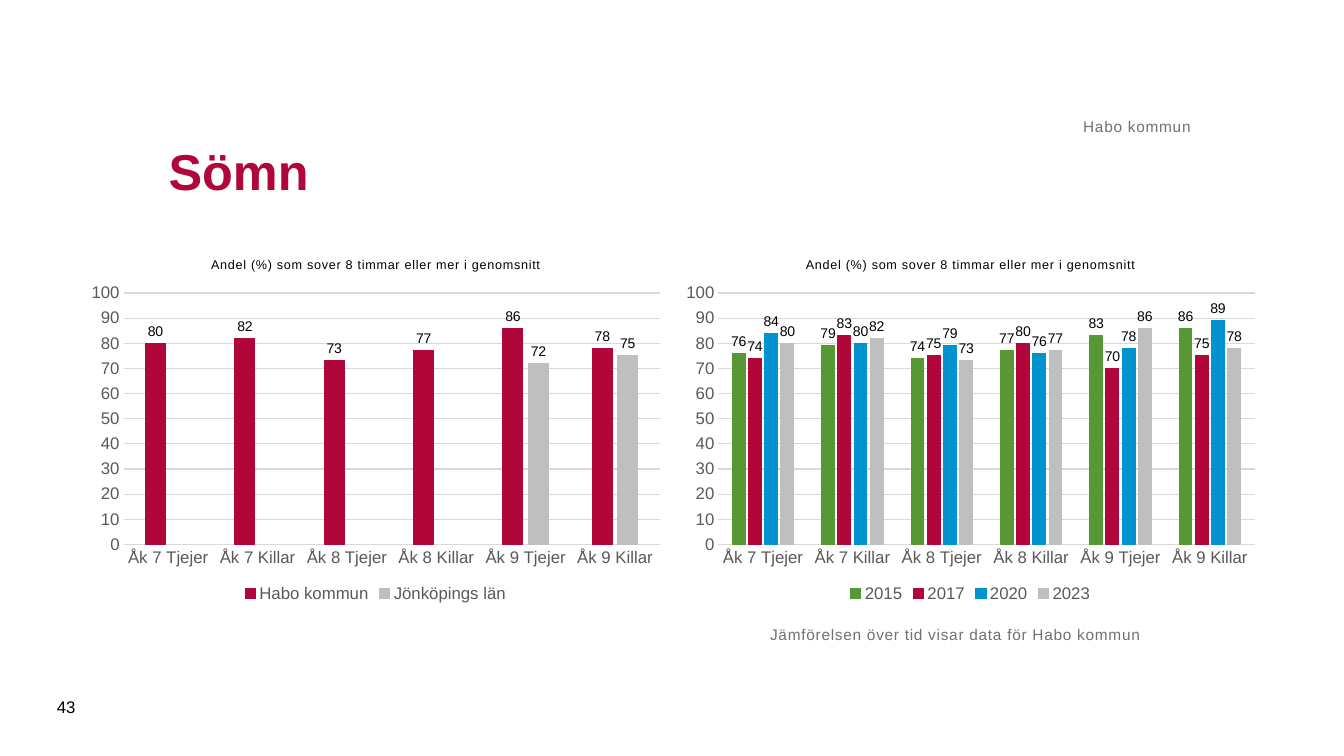
from dataclasses import dataclass

from pptx import Presentation
from pptx.chart.data import CategoryChartData as ChartData
from pptx.dml.color import RGBColor as RGB
from pptx.enum.chart import XL_CHART_TYPE as ChartType, XL_LABEL_POSITION as LabelPos
from pptx.enum.chart import XL_LEGEND_POSITION as LegendPos, XL_TICK_MARK as Tick
from pptx.enum.text import MSO_ANCHOR as Anchor, PP_ALIGN as Align
from pptx.util import Inches, Pt


@dataclass(frozen=True)
class Theme:
    font: str = "Arial"
    red: str = "B1063A"
    green: str = "579835"
    blue: str = "0093D0"
    silver: str = "BFBFBF"
    grid: str = "D9D9D9"
    axis: str = "595959"
    note: str = "717171"
    black: str = "000000"
    title_size: float = 36
    axis_size: float = 12
    note_size: float = 11
    label_size: float = 10
    caption_size: float = 9
    line: float = 0.75
    spacing: str = "50"


T = Theme()
WIDTH, HEIGHT = Inches(13.33), Inches(7.5)
CAPTION = "Andel (%) som sover 8 timmar eller mer i genomsnitt"
GROUPS = [f"Åk {year} {sex}" for year in (7, 8, 9) for sex in ("Tjejer", "Killar")]
COUNTY = [
    ("Habo kommun", (80, 82, 73, 77, 86, 78), T.red),
    ("Jönköpings län", (None, None, None, None, 72, 75), T.silver),
]
YEARS = [
    ("2015", (76, 79, 74, 77, 83, 86), T.green),
    ("2017", (74, 83, 75, 80, 70, 75), T.red),
    ("2020", (84, 80, 79, 76, 78, 89), T.blue),
    ("2023", (80, 82, 73, 77, 86, 78), T.silver),
]


def share(x, y, w, h):
    return int(WIDTH * x), int(HEIGHT * y), int(WIDTH * w), int(HEIGHT * h)


def apply(obj, **values):
    for name, value in values.items():
        setattr(obj, name, value)


def style_font(font, size, color, bold=False):
    apply(font, name=T.font, size=Pt(size), bold=bold)
    font.color.rgb = RGB.from_string(color)


def style_line(line, color):
    line.color.rgb = RGB.from_string(color)
    line.width = Pt(T.line)


def write(tf, text, size, color, bold=False, align=Align.LEFT, spaced=False):
    p = tf.paragraphs[0]
    p.alignment = align
    r = p.add_run()
    r.text = text
    style_font(r.font, size, color, bold)
    if spaced:
        r.font._element.set("spc", T.spacing)


def add_title(s, text, box):
    sp = s.shapes.title
    apply(sp, **dict(zip(("left", "top", "width", "height"), box)))
    apply(sp.text_frame, vertical_anchor=Anchor.MIDDLE, word_wrap=True)
    write(sp.text_frame, text, T.title_size, T.red, bold=True)


def add_text(s, text, box, size, color, anchor, inset=0, **options):
    tf = s.shapes.add_textbox(*box).text_frame
    apply(tf, word_wrap=True, vertical_anchor=anchor, margin_left=inset,
          margin_right=inset, margin_top=inset, margin_bottom=inset)
    write(tf, text, size, color, **options)


def style_axes(chart):
    cat, val = chart.category_axis, chart.value_axis
    for axis in (cat, val):
        apply(axis, major_tick_mark=Tick.NONE, minor_tick_mark=Tick.NONE)
        style_font(axis.tick_labels.font, T.axis_size, T.axis)
    style_line(cat.format.line, T.grid)
    apply(val, minimum_scale=0, maximum_scale=100, major_unit=10,
          has_major_gridlines=True)
    style_line(val.major_gridlines.format.line, T.grid)
    val.format.line.fill.background()
    apply(val.tick_labels, number_format="#,##0;#,##0", number_format_is_linked=False)


def add_column_chart(s, series, box, label_format):
    data = ChartData()
    data.categories = GROUPS
    for name, values, _ in series:
        data.add_series(name, values)
    chart = s.shapes.add_chart(ChartType.COLUMN_CLUSTERED, *box, data).chart
    style_font(chart.font, T.label_size, T.black)
    write(chart.chart_title.text_frame, CAPTION, T.caption_size, T.black,
          align=Align.CENTER, spaced=True)
    chart.chart_title.include_in_layout = False
    chart.has_legend = True
    apply(chart.legend, position=LegendPos.BOTTOM, include_in_layout=False)
    style_font(chart.legend.font, T.axis_size, T.axis)
    style_axes(chart)
    plot = chart.plots[0]
    apply(plot, gap_width=219, overlap=-27, vary_by_categories=False)
    for ser, (_, _, color) in zip(plot.series, series):
        ser.invert_if_negative = False
        ser.format.fill.solid()
        ser.format.fill.fore_color.rgb = RGB.from_string(color)
        style_line(ser.format.line, color)
        labels = ser.data_labels
        apply(labels, show_value=True, position=LabelPos.OUTSIDE_END,
              number_format=label_format, number_format_is_linked=False)
        style_font(labels.font, T.label_size, T.black)


def main():
    prs = Presentation()
    apply(prs, slide_width=WIDTH, slide_height=HEIGHT)
    s = prs.slides.add_slide(prs.slide_layouts[5])
    add_title(s, "Sömn", share(0.118, 0.131, 0.768, 0.189))
    charts = ((COUNTY, "#,##0;#,##0"), (YEARS, "#,##0"))
    for col, (series, label_format) in enumerate(charts):
        box = share(0.0593 + col * 0.4426, 0.32, 0.4404, 0.4827)
        add_column_chart(s, series, box, label_format)
    add_text(s, "Jämförelsen över tid visar data för Habo kommun",
             share(0.573, 0.827, 0.398, 0.125), T.note_size, T.note,
             Anchor.TOP, spaced=True)
    add_text(s, "Habo kommun", share(0.118, 0.083, 0.768, 0.097), T.note_size,
             T.note, Anchor.BOTTOM, align=Align.RIGHT, spaced=True)
    add_text(s, "43", share(0.035, 0.908, 0.043, 0.053), T.axis_size, T.black,
             Anchor.MIDDLE, inset=Inches(0.1))
    prs.save("out.pptx")


if __name__ == "__main__":
    main()
